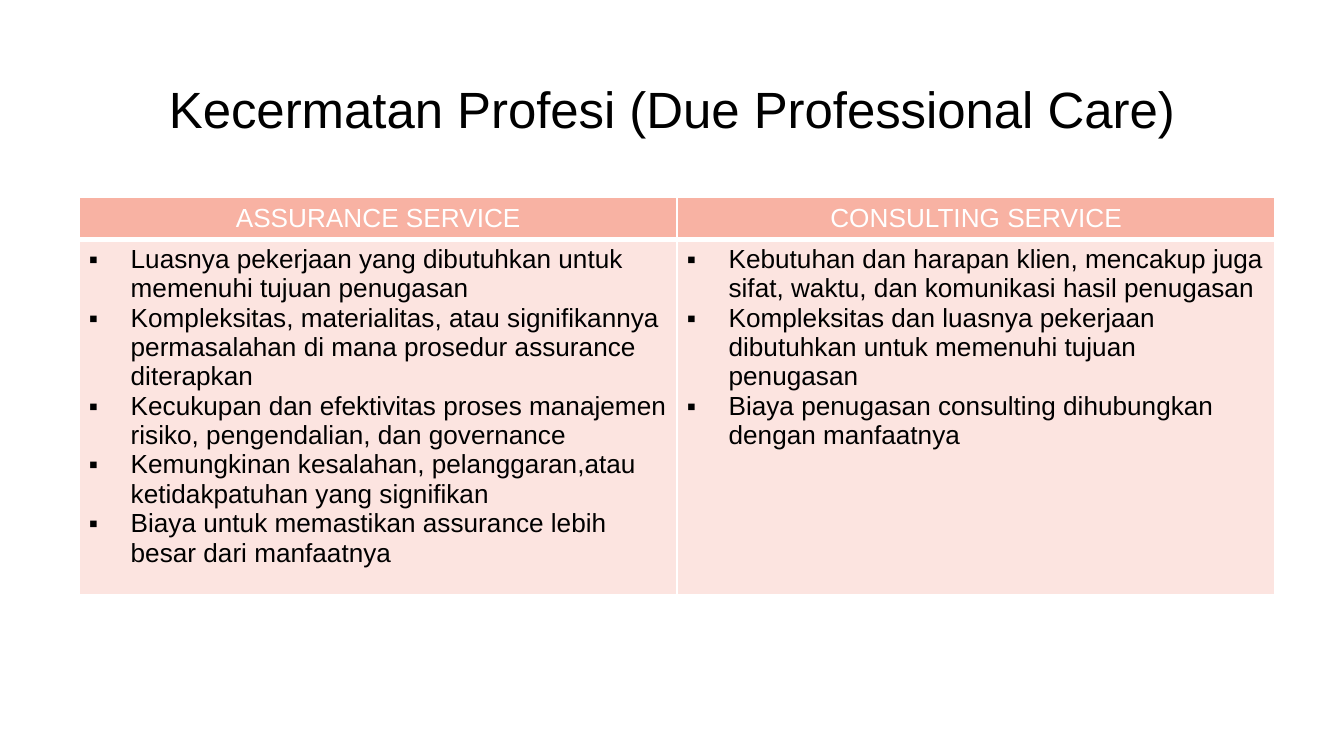
"""Build a slide comparing due professional care in assurance and consulting services."""
from lxml import etree
from pptx import Presentation
from pptx import util as u
from pptx.dml import color
from pptx.enum import text
from pptx.oxml import ns

TITLE = "Kecermatan Profesi (Due Professional Care)"
SERVICES = {
    "ASSURANCE SERVICE": [
        "Luasnya pekerjaan yang dibutuhkan untuk memenuhi tujuan penugasan",
        "Kompleksitas, materialitas, atau signifikannya permasalahan di mana prosedur assurance diterapkan",
        "Kecukupan dan efektivitas proses manajemen risiko, pengendalian, dan governance",
        "Kemungkinan kesalahan, pelanggaran,atau ketidakpatuhan yang signifikan",
        "Biaya untuk memastikan assurance lebih besar dari manfaatnya",
    ],
    "CONSULTING SERVICE": [
        "Kebutuhan dan harapan klien, mencakup juga sifat, waktu, dan komunikasi hasil penugasan",
        "Kompleksitas dan luasnya pekerjaan dibutuhkan untuk memenuhi tujuan penugasan",
        "Biaya penugasan consulting dihubungkan dengan manfaatnya",
    ],
}
BLACK, WHITE, HEADER_FILL, BODY_FILL = "000000", "FFFFFF", "F8B2A3", "FCE4E0"
COLUMN_WIDTH, ROW_HEIGHTS = 11.3, (0.76, 6.5)
BULLET_INDENT = u.Cm(0.79)


def rgb(value):
    return color.RGBColor.from_string(value)


def write(frame, lines, size=14, ink=BLACK, align=text.PP_ALIGN.LEFT, bullet=None):
    for index, line in enumerate(lines):
        para = frame.paragraphs[0] if index == 0 else frame.add_paragraph()
        para.alignment = align
        if bullet:
            properties = para._p.get_or_add_pPr()
            properties.set("marL", str(BULLET_INDENT))
            properties.set("indent", str(-BULLET_INDENT))
            etree.SubElement(properties, ns.qn("a:buFont"), typeface="Arial")
            etree.SubElement(properties, ns.qn("a:buChar"), char=bullet)
        span = para.add_run()
        span.text = line
        span.font.size = u.Pt(size)
        span.font.name = "Arial"
        span.font.bold = False
        span.font.color.rgb = rgb(ink)


def style_cell(cell, fill, bottom=1):
    cell.margin_left = cell.margin_right = u.Cm(0.18)
    cell.margin_top = cell.margin_bottom = u.Cm(0.1)
    properties = cell._tc.get_or_add_tcPr()
    for side, width in {"L": 1, "R": 1, "T": 1, "B": bottom}.items():
        line = etree.SubElement(properties, ns.qn(f"a:ln{side}"), w=str(u.Pt(width)))
        solid = etree.SubElement(line, ns.qn("a:solidFill"))
        etree.SubElement(solid, ns.qn("a:srgbClr"), val=WHITE)
    cell.fill.solid()
    cell.fill.fore_color.rgb = rgb(fill)


def add_title(page):
    box = page.shapes.add_textbox(u.Cm(1.27), u.Cm(1.35), u.Cm(22.86), u.Cm(3.17))
    box.text_frame.word_wrap = True
    write(box.text_frame, [TITLE], size=27.3, align=text.PP_ALIGN.CENTER)


def add_services(page):
    count = len(SERVICES)
    table = page.shapes.add_table(
        len(ROW_HEIGHTS), count, u.Cm(1.5), u.Cm(3.73),
        u.Cm(COLUMN_WIDTH * count), u.Cm(sum(ROW_HEIGHTS))).table
    for row, height in zip(table.rows, ROW_HEIGHTS):
        row.height = u.Cm(height)
    for index, (service, points) in enumerate(SERVICES.items()):
        table.columns[index].width = u.Cm(COLUMN_WIDTH)
        header, body = table.cell(0, index), table.cell(1, index)
        style_cell(header, HEADER_FILL, bottom=3)
        header.vertical_anchor = text.MSO_ANCHOR.MIDDLE
        write(header.text_frame, [service], ink=WHITE, align=text.PP_ALIGN.CENTER)
        style_cell(body, BODY_FILL)
        write(body.text_frame, points, bullet="▪")


def main():
    deck = Presentation()
    deck.slide_width, deck.slide_height = u.Cm(25.4), u.Cm(14.29)
    page = deck.slides.add_slide(deck.slide_layouts[6])
    add_title(page)
    add_services(page)
    deck.save("out.pptx")


if __name__ == "__main__":
    main()
